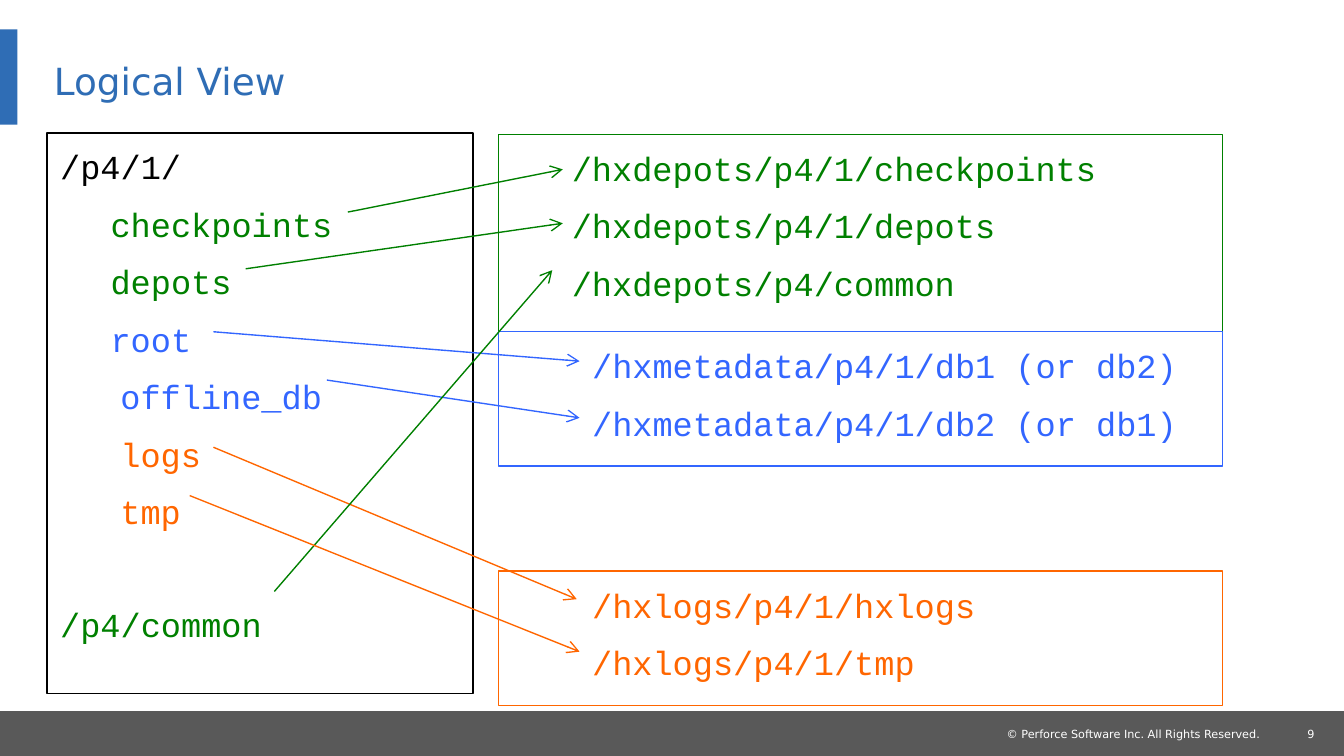
from pptx import Presentation
from pptx.dml.color import RGBColor
from pptx.enum.shapes import MSO_CONNECTOR, MSO_SHAPE
from pptx.enum.text import MSO_ANCHOR, PP_ALIGN
from pptx.oxml.ns import qn
from pptx.util import Pt
from lxml import etree

PX = 9144000 / 1920  # EMU in one px; the slide is 1920 px wide
COLORS = {
    "black": "000000", "white": "FFFFFF", "gray": "595959", "accent": "2F6DB5",
    "green": "008000", "blue": "3366FF", "orange": "FF6600",
}


def emu(*lengths):
    return [round(length * PX) for length in lengths]


def add_text(shape, text, *, color, size=18, font="Courier New", indent=0, before=0,
             align=PP_ALIGN.LEFT, line_spacing=None, inset=(0, 0),
             anchor=MSO_ANCHOR.TOP, wrap=True):
    """Append one paragraph to the shape's text."""
    frame = shape.text_frame
    frame.word_wrap = wrap
    frame.vertical_anchor = anchor
    frame.margin_left, frame.margin_top = emu(*inset)
    frame.margin_right = frame.margin_left
    frame.margin_bottom = 0
    paragraph = frame.add_paragraph() if frame.text else frame.paragraphs[0]
    paragraph._p.get_or_add_pPr().set("marL", str(emu(indent)[0]))
    paragraph.alignment = align
    paragraph.space_before = Pt(before)
    if line_spacing:
        paragraph.line_spacing = Pt(line_spacing)
    run = paragraph.add_run()
    run.text = text
    run.font.name = font
    run.font.size = Pt(size)
    run.font.color.rgb = RGBColor.from_string(COLORS[color])


presentation = Presentation()
presentation.slide_width, presentation.slide_height = emu(1920, 1080)
slide = presentation.slides.add_slide(presentation.slide_layouts[6])
shapes = slide.shapes

# Footer bar and title accent
for color, box in [("gray", (0, 1016, 1920, 64)), ("accent", (0, 42, 25, 136))]:
    bar = shapes.add_shape(MSO_SHAPE.RECTANGLE, *emu(*box))
    bar.shadow.inherit = False
    bar.fill.solid()
    bar.fill.fore_color.rgb = RGBColor.from_string(COLORS[color])
    bar.line.fill.background()

# Footer texts and title
page_number = shapes.add_textbox(*emu(1795, 1039, 83, 19))
add_text(page_number, "9", color="white", size=6, font="DejaVu Sans", align=PP_ALIGN.RIGHT)
copyright_line = shapes.add_textbox(*emu(1438, 1039, 372, 19))
add_text(copyright_line, "© Perforce Software Inc. All Rights Reserved.",
         color="white", size=6, font="DejaVu Sans", wrap=False)
title = shapes.add_textbox(*emu(77, 54, 1486, 115))
add_text(title, "Logical View", color="accent", size=20, font="DejaVu Sans",
         line_spacing=27, anchor=MSO_ANCHOR.MIDDLE)

# Directory panels: outline, box, rows of (text, color, indent, space before)
GAP = 9.2
WIDE_GAP = 38.8  # leaves one row free
panels = [
    ("green", (712, 192, 1035, 282), [
        ("/hxdepots/p4/1/checkpoints", "green", 86, 0),
        ("/hxdepots/p4/1/depots", "green", 86, GAP),
        ("/hxdepots/p4/common", "green", 86, GAP),
    ]),
    ("blue", (712, 474, 1035, 192), [
        ("/hxmetadata/p4/1/db1 (or db2)", "blue", 115, 0),
        ("/hxmetadata/p4/1/db2 (or db1)", "blue", 115, GAP),
    ]),
    ("orange", (712, 816, 1035, 192), [
        ("/hxlogs/p4/1/hxlogs", "orange", 115, 0),
        ("/hxlogs/p4/1/tmp", "orange", 115, GAP),
    ]),
    ("black", (67, 190, 609, 801), [
        ("/p4/1/", "black", 0, 0),
        ("checkpoints", "green", 72, GAP),
        ("depots", "green", 72, GAP),
        ("root", "blue", 72, GAP),
        ("offline_db", "blue", 86, GAP),
        ("logs", "orange", 86, GAP),
        ("tmp", "orange", 86, GAP),
        ("/p4/common", "green", 0, WIDE_GAP),
    ]),
]
for outline, box, rows in panels:
    panel = shapes.add_shape(MSO_SHAPE.RECTANGLE, *emu(*box))
    panel.shadow.inherit = False
    panel.fill.background()
    panel.line.color.rgb = RGBColor.from_string(COLORS[outline])
    panel.line.width = Pt(0.75)
    for text, color, indent, before in rows:
        add_text(panel, text, color=color, indent=indent, before=before, inset=(19, 19))

# Arrows from each logical directory to its physical location
arrows = [
    ("green", (497, 303, 804, 242)),   # checkpoints
    ("green", (351, 384, 804, 319)),   # depots
    ("blue", (305, 474, 828, 516)),    # root
    ("blue", (467, 543, 828, 597)),    # offline_db
    ("orange", (305, 639, 824, 856)),  # logs
    ("green", (392, 845, 789, 386)),   # common
    ("orange", (271, 708, 828, 931)),  # tmp
]
for color, ends in arrows:
    arrow = shapes.add_connector(MSO_CONNECTOR.STRAIGHT, *emu(*ends))
    arrow.line.color.rgb = RGBColor.from_string(COLORS[color])
    arrow.line.width = Pt(0.75)
    etree.SubElement(arrow.line._get_or_add_ln(), qn("a:tailEnd"), type="arrow")
    etree.SubElement(arrow._element.spPr, qn("a:effectLst"))

presentation.save("out.pptx")
